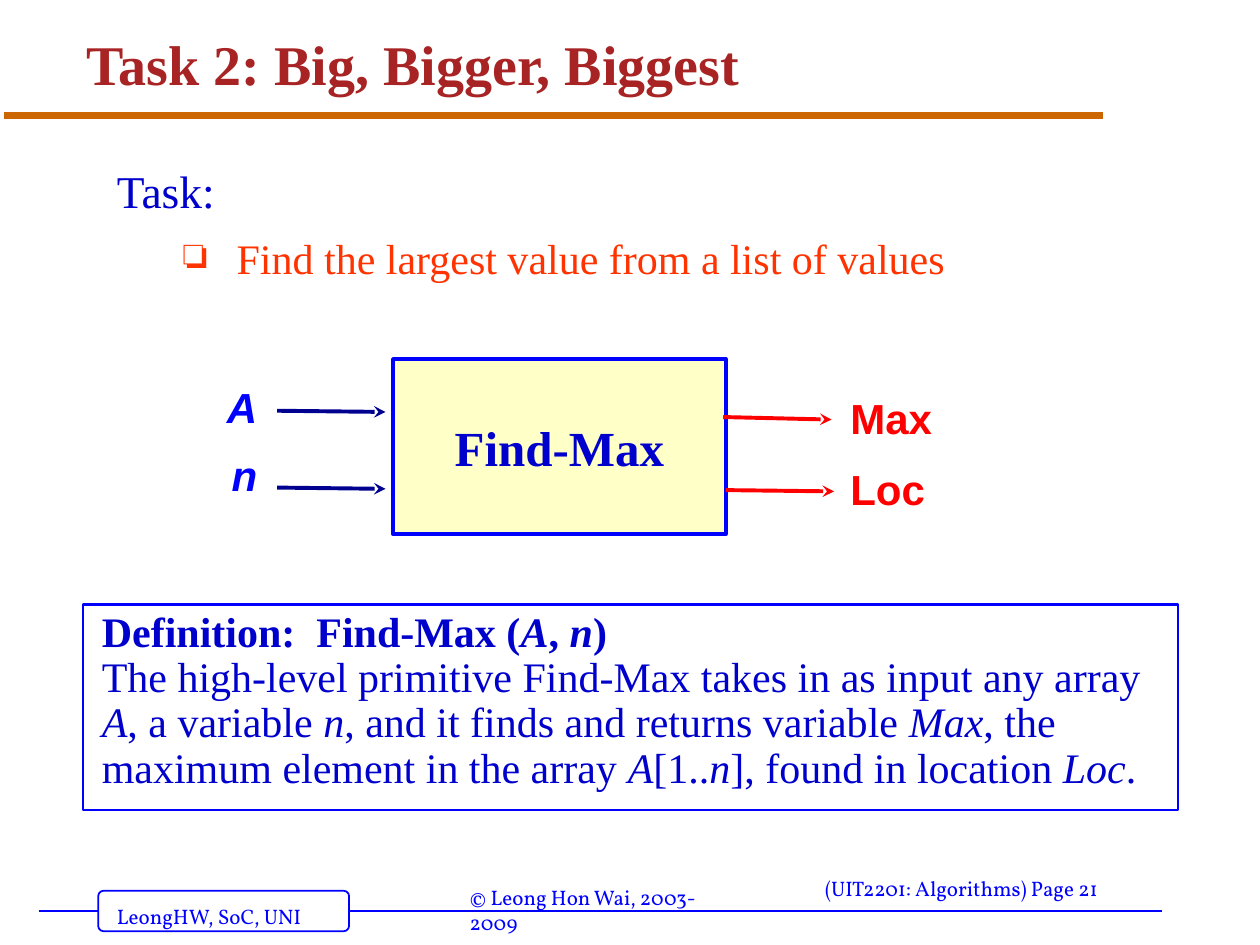
from dataclasses import dataclass
from pptx import Presentation
from pptx.dml.color import RGBColor
from pptx.enum.shapes import MSO_CONNECTOR, MSO_SHAPE
from pptx.enum.text import MSO_ANCHOR, PP_ALIGN
from pptx.oxml.ns import qn
from pptx.util import Inches, Pt
from lxml.etree import SubElement


@dataclass(frozen=True)
class Theme:
    serif: str = "Times New Roman"
    sans: str = "Arial"
    foot: str = "Vollkorn"
    white: str = "FFFFFF"
    cream: str = "FFFFC8"
    blue: str = "0000FF"
    ink: str = "0000CC"
    navy: str = "000090"
    red: str = "FF0000"
    flame: str = "FF3300"
    brick: str = "A82323"
    rust: str = "CC6600"
    title: int = 32
    box: int = 28
    lead: int = 26
    body: int = 24
    small: int = 12


class Deck:
    def __init__(self, theme):
        self.theme = theme
        self.file = Presentation()
        self.file.slide_width, self.file.slide_height = Inches(10), Inches(7.5)
        self.slide = self.file.slides.add_slide(self.file.slide_layouts[6])

    def style(self, run, font, size, color, bold=False, italic=False):
        run.font.name, run.font.size = font, Pt(size)
        run.font.color.rgb = RGBColor.from_string(color)
        run.font.bold, run.font.italic = bold, italic

    def space(self, para, lines=None, before=None, left=0, hang=0, mark=None):
        if lines:
            para.line_spacing = lines
        props = para._p.get_or_add_pPr()
        if before:
            para.space_before = Pt(1)
            gap = props.find(qn("a:spcBef"))
            gap.remove(gap[0])
            SubElement(gap, qn("a:spcPct"), val=str(before * 1000))
        if left:
            props.set("marL", str(Inches(left)))
            props.set("indent", str(Inches(hang)))
        if mark:
            SubElement(props, qn("a:buChar"), char=mark)

    def mix(self, para, text, *look, bold=False):
        for i, part in enumerate(text.split("*")):
            run = para.add_run()
            run.text = part
            self.style(run, *look, bold, i % 2 == 1)

    def label(self, text, spot, *look, align=PP_ALIGN.LEFT,
              anchor=MSO_ANCHOR.TOP):
        box = self.slide.shapes.add_textbox(*map(Inches, spot))
        frame = box.text_frame
        frame.word_wrap = True
        frame.vertical_anchor = anchor
        frame.text = text
        para = frame.paragraphs[0]
        para.alignment = align
        self.style(para.runs[0], *look)
        return frame

    def panel(self, kind, spot, fill, width):
        shape = self.slide.shapes.add_shape(kind, *map(Inches, spot))
        shape.shadow.inherit = False
        if fill:
            shape.fill.solid()
            shape.fill.fore_color.rgb = RGBColor.from_string(fill)
        else:
            shape.fill.background()
        shape.line.color.rgb = RGBColor.from_string(self.theme.blue)
        shape.line.width = Pt(width)
        shape.text_frame.word_wrap = True
        return shape

    def line(self, ends, color, width, head=False):
        link = self.slide.shapes.add_connector(
            MSO_CONNECTOR.STRAIGHT, *map(Inches, ends))
        link.line.color.rgb = RGBColor.from_string(color)
        link.line.width = Pt(width)
        if head:
            SubElement(link.line._get_or_add_ln(), qn("a:tailEnd"),
                       type="stealth")
        SubElement(link._element.spPr, qn("a:effectLst"))


def footer(deck):
    t = deck.theme
    deck.line((0.31, 7.23, 9.22, 7.23), t.blue, 1)
    tab = deck.panel(MSO_SHAPE.ROUNDED_RECTANGLE, (0.78, 7.07, 1.99, 0.32),
                     t.white, 1)
    tab.adjustments[0] = 0.125
    for text, x, y, w in (("LeongHW, SoC, UNI", 0.83, 7.12, 1.78),
                          ("(UIT2201: Algorithms) Page 21", 6.45, 6.9, 2.51),
                          ("© Leong Hon Wai, 2003-2009", 3.63, 6.97, 2.34)):
        deck.label(text, (x, y, w, 0.3), t.foot, t.small, t.blue)


def heading(deck):
    t = deck.theme
    deck.line((0.03, 0.92, 8.75, 0.92), t.rust, 4)
    title = deck.label("Task 2: Big, Bigger, Biggest", (0.59, 0.13, 8.5, 0.69),
                       t.serif, t.title, t.brick, True,
                       anchor=MSO_ANCHOR.BOTTOM)
    deck.space(title.paragraphs[0], 0.9)
    body = deck.label("Task:", (0.83, 1.33, 8.5, 1.37),
                      t.serif, t.lead, t.ink)
    deck.space(body.paragraphs[0], 0.8, 80, 0.31, -0.31)
    item = body.add_paragraph()
    item.text = "Find the largest value from a list of values"
    item.level = 1
    deck.style(item.runs[0], t.serif, t.body, t.flame)
    deck.space(item, 0.9, 50, 0.95, -0.42, "❏")


def diagram(deck):
    t = deck.theme
    box = deck.panel(MSO_SHAPE.RECTANGLE, (3.12, 2.85, 2.64, 1.39),
                     t.cream, 2.25)
    frame = box.text_frame
    frame.margin_left = frame.margin_right = Inches(0.05)
    frame.vertical_anchor = MSO_ANCHOR.MIDDLE
    frame.text = "Find-Max"
    para = frame.paragraphs[0]
    para.alignment = PP_ALIGN.CENTER
    deck.style(para.runs[0], t.serif, t.box, t.ink, True)
    deck.space(para, before=50)

    for x, y, drop, color in ((2.2, 3.26, 0.01, t.navy),
                              (2.2, 3.87, 0.01, t.navy),
                              (5.74, 3.31, 0.02, t.red),
                              (5.76, 3.89, 0.01, t.red)):
        deck.line((x, y, x + 0.86, y + drop), color, 2.25, True)

    for text, x, y, w, color, slant, align in (
            ("A", 1.69, 2.98, 0.46, t.blue, True, PP_ALIGN.CENTER),
            ("n", 1.74, 3.52, 0.49, t.blue, True, PP_ALIGN.LEFT),
            ("Max", 6.65, 3.07, 0.86, t.red, False, PP_ALIGN.LEFT),
            ("Loc", 6.65, 3.63, 0.8, t.red, False, PP_ALIGN.LEFT)):
        deck.label(text, (x, y, w, 0.5), t.sans, t.body, color, True, slant,
                   align=align)


def meaning(deck):
    t = deck.theme
    box = deck.panel(MSO_SHAPE.RECTANGLE, (0.66, 4.8, 8.69, 1.63), None, 1.5)
    frame = box.text_frame
    frame.vertical_anchor = MSO_ANCHOR.TOP
    para = frame.paragraphs[0]
    para.alignment = PP_ALIGN.LEFT
    deck.space(para, 0.9, 50, 0.05)
    look = t.serif, t.body, t.ink
    deck.mix(para, "Definition:  Find-Max (*A*, *n*)", *look, bold=True)
    para.add_line_break()
    deck.mix(para, "The high-level primitive Find-Max takes in as input any "
             "array *A*, a variable *n*, and it finds and returns variable "
             "*Max*, the maximum element in the array *A*[1..*n*], found in "
             "location *Loc*.", *look)


def main():
    deck = Deck(Theme())
    footer(deck)
    heading(deck)
    diagram(deck)
    meaning(deck)
    deck.file.save("out.pptx")


if __name__ == "__main__":
    main()
